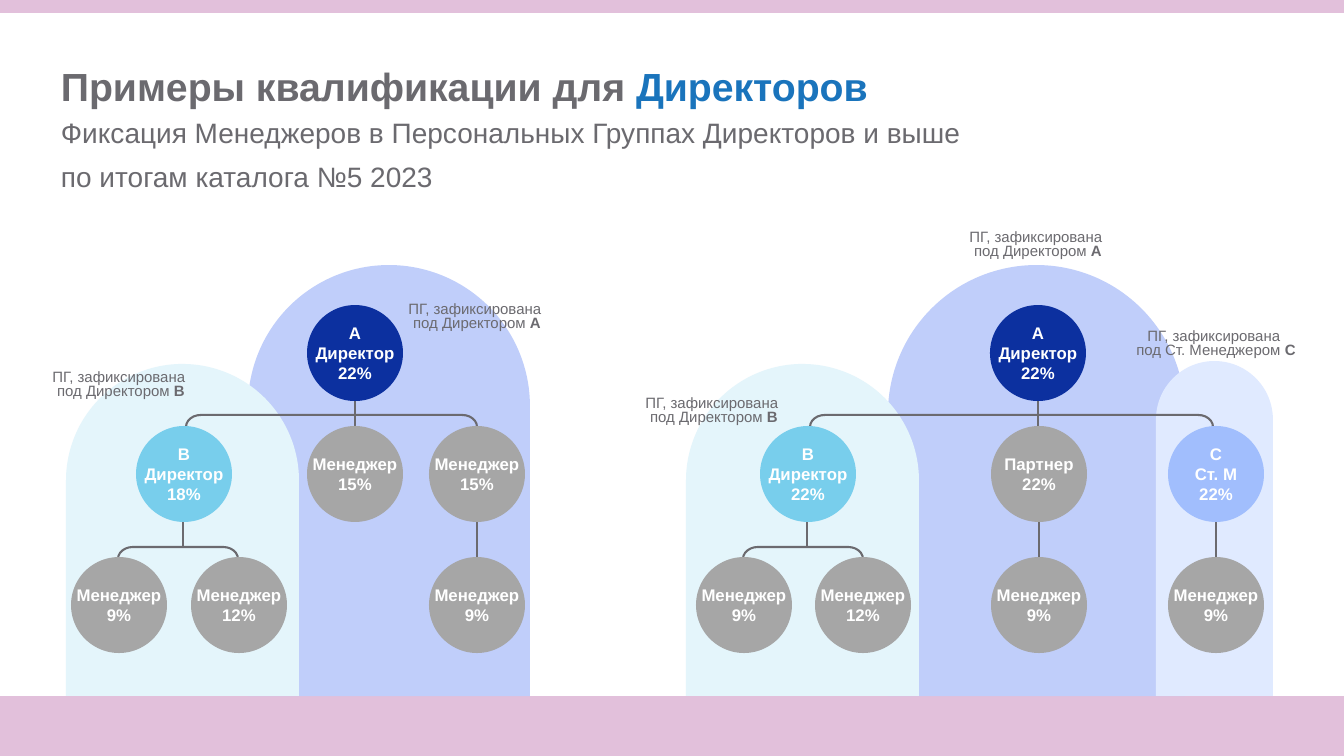
from pptx import Presentation
from pptx.dml.color import RGBColor as Rgb
from pptx.enum.shapes import MSO_CONNECTOR as Link, MSO_SHAPE as Kind
from pptx.enum.text import MSO_ANCHOR as Anchor, PP_ALIGN as Align
from pptx.oxml.ns import qn
from pptx.util import Pt
from lxml.etree import SubElement as Sub

WIDE, HIGH = 1344, 756
PX = 12192000 / WIDE
BASE = 696  # bottom of the white panel, where the arches stand
DISC = 96
ROWS = (305, 426, 557)

THEME = {
    "font": "Arial", "title": 28, "lead": 20, "node": 12, "note": 10.7, "line": 1.5,
    "band": "D9ABCF", "white": "FFFFFF", "text": "6B6A6F", "accent": "1A74BC",
    "navy": "0C309F", "sky": "78CEEC", "grey": "A6A6A6", "blue": "A1BEFD",
    "arch A": "C0CEFA", "arch B": "E4F5FB", "arch C": "E0EAFF",
}


def put(kind, x, y, w, h, fill=None):
    """Add a flat shape: filled without a line, or outlined when fill is None."""
    shape = slide.shapes.add_shape(kind, *(round(n * PX) for n in (x, y, w, h)))
    shape.shadow.inherit = False
    if fill:
        shape.fill.solid()
        shape.fill.fore_color.rgb = Rgb.from_string(THEME[fill])
        shape.line.fill.background()
    else:
        shape.fill.background()
        shape.line.color.rgb = Rgb.from_string(THEME["text"])
        shape.line.width = Pt(THEME["line"])
    return shape


def write(para, text, size, ink="text", bold=False):
    run = para.add_run()
    run.text = text
    run.font.name = THEME["font"]
    run.font.size = Pt(THEME[size])
    run.font.bold = bold
    run.font.color.rgb = Rgb.from_string(THEME[ink])


deck = Presentation()
deck.slide_width, deck.slide_height = round(WIDE * PX), round(HIGH * PX)
slide = deck.slides.add_slide(deck.slide_layouts[6])

# Frame
band = put(Kind.RECTANGLE, 0, 0, WIDE, HIGH, "band")
tint = band.fill._xPr.find(qn("a:solidFill"))[0]
Sub(tint, qn("a:alpha")).set("val", "75000")
put(Kind.RECTANGLE, 0, 13, WIDE, BASE - 13, "white")

# Heading: top, height, anchor, paragraphs of runs
heads = [
    (73, 37, Anchor.BOTTOM, [[("Примеры квалификации для ", "title", "text", True),
                              ("Директоров", "title", "accent", True)]]),
    (119, 39, Anchor.TOP, [
        [("Фиксация Менеджеров в Персональных Группах Директоров и выше", "lead")],
        [("по итогам каталога №5 2023", "lead")]]),
]
for y, h, anchor, paras in heads:
    box = slide.shapes.add_textbox(*(round(n * PX) for n in (61, y, 1223, h)))
    frame = box.text_frame
    frame.word_wrap = True
    frame.vertical_anchor = anchor
    frame.margin_left = frame.margin_right = frame.margin_top = frame.margin_bottom = 0
    for i, runs in enumerate(paras):
        para = frame.add_paragraph() if i else frame.paragraphs[0]
        para.line_spacing = 0.9
        if i:
            para.space_before = Pt(10)
        for run in runs:
            write(para, *run)

# Personal groups: left, top, width, fill
arches = [
    (248, 265, 282, "arch A"), (66, 364, 233, "arch B"),
    (888, 265, 297, "arch A"), (1156, 361, 117, "arch C"), (686, 364, 233, "arch B"),
]
for x, y, w, fill in arches:
    arch = put(Kind.ROUND_2_SAME_RECTANGLE, x, y, w, BASE - y, fill)
    arch.adjustments[0] = 0.5

# Stems: centre, top, bottom
stems = [
    (355, 387, 426), (183, 509, 548), (477, 519, 558),
    (1038, 387, 426), (807, 509, 548), (1039, 519, 558), (1216, 519, 558),
]
for x, top, end in stems:
    stem = slide.shapes.add_connector(
        Link.STRAIGHT, *(round(n * PX) for n in (x, top, x, end)))
    stem.line.color.rgb = Rgb.from_string(THEME["text"])
    stem.line.width = Pt(THEME["line"])
    Sub(stem._element.spPr, qn("a:effectLst"))

# Branches, drawn upright and then turned: left, top, span
THICK = 12
for x, y, span in [(186, 415, 291), (118, 547, 120), (810, 415, 403), (743, 547, 120)]:
    fork = put(Kind.LEFT_BRACKET, x + (span - THICK) / 2, y - (span - THICK) / 2,
               THICK, span)
    fork.adjustments[0] = 1.243
    fork.rotation = 90

# People: left, row, fill, lines
nodes = [
    (307, 0, "navy", ("A", "Директор", "22%")),
    (136, 1, "sky", ("В", "Директор", "18%")),
    (307, 1, "grey", ("Менеджер", "15%")),
    (429, 1, "grey", ("Менеджер", "15%")),
    (71, 2, "grey", ("Менеджер", "9%")),
    (191, 2, "grey", ("Менеджер", "12%")),
    (429, 2, "grey", ("Менеджер", "9%")),
    (990, 0, "navy", ("A", "Директор", "22%")),
    (760, 1, "sky", ("В", "Директор", "22%")),
    (991, 1, "grey", ("Партнер", "22%")),
    (1168, 1, "blue", ("С", "Ст. М", "22%")),
    (696, 2, "grey", ("Менеджер", "9%")),
    (815, 2, "grey", ("Менеджер", "12%")),
    (991, 2, "grey", ("Менеджер", "9%")),
    (1168, 2, "grey", ("Менеджер", "9%")),
]
for x, row, fill, lines in nodes:
    frame = put(Kind.OVAL, x, ROWS[row], DISC, DISC, fill).text_frame
    frame.word_wrap = False
    frame.vertical_anchor = Anchor.MIDDLE
    frame.margin_left = frame.margin_right = frame.margin_top = frame.margin_bottom = 0
    for i, line in enumerate(lines):
        para = frame.add_paragraph() if i else frame.paragraphs[0]
        para.alignment = Align.CENTER
        write(para, line, "node", "white", True)

# Group notes: left, top, width, role, letter
notes = [
    (26, 367, 190, "Директором", "B"), (382, 299, 190, "Директором", "A"),
    (619, 393, 190, "Директором", "B"), (943, 227, 190, "Директором", "A"),
    (1106, 326, 220, "Ст. Менеджером", "С"),
]
for x, y, w, role, mark in notes:
    box = slide.shapes.add_textbox(*(round(n * PX) for n in (x, y, w, 38)))
    box.text_frame.word_wrap = True
    para = box.text_frame.paragraphs[0]
    para.alignment = Align.CENTER
    para.line_spacing = Pt(10)
    write(para, "ПГ, зафиксирована ", "note")
    para.add_line_break()
    write(para, f"под {role} ", "note")
    write(para, mark, "note", bold=True)

deck.save("out.pptx")
